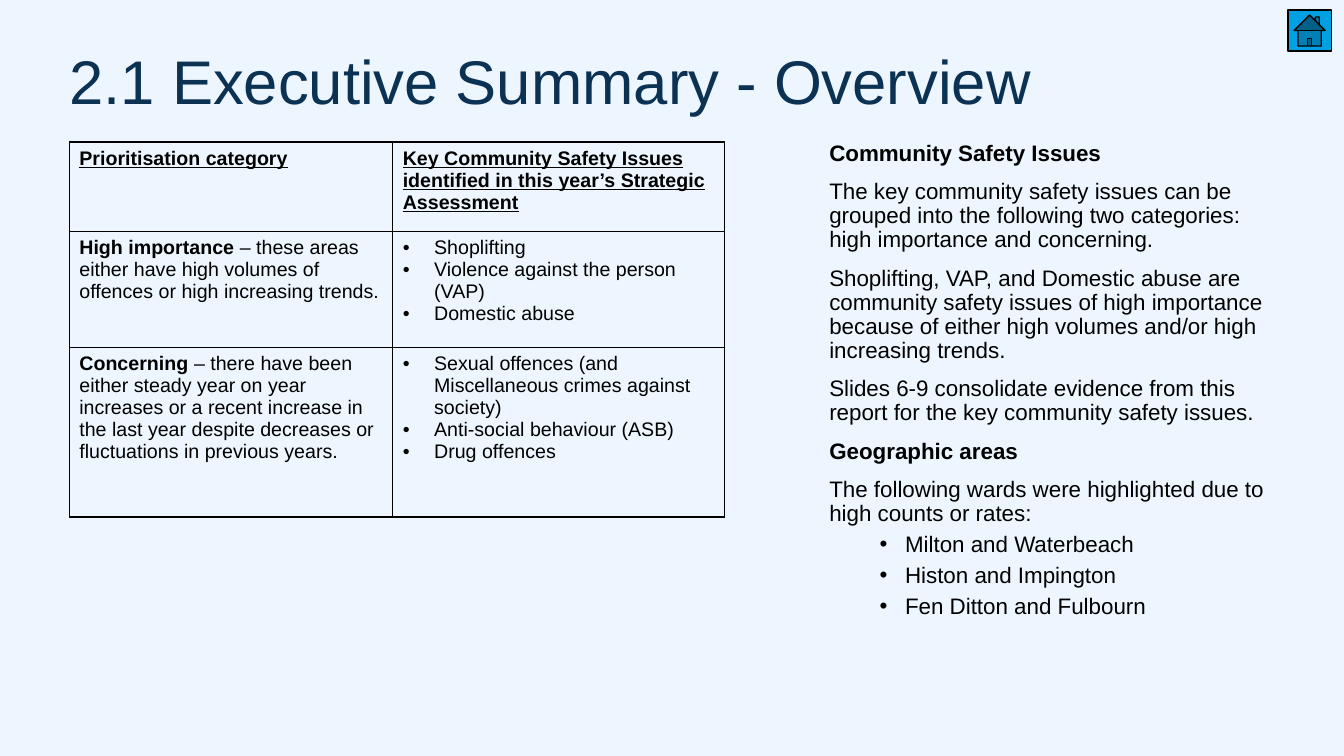
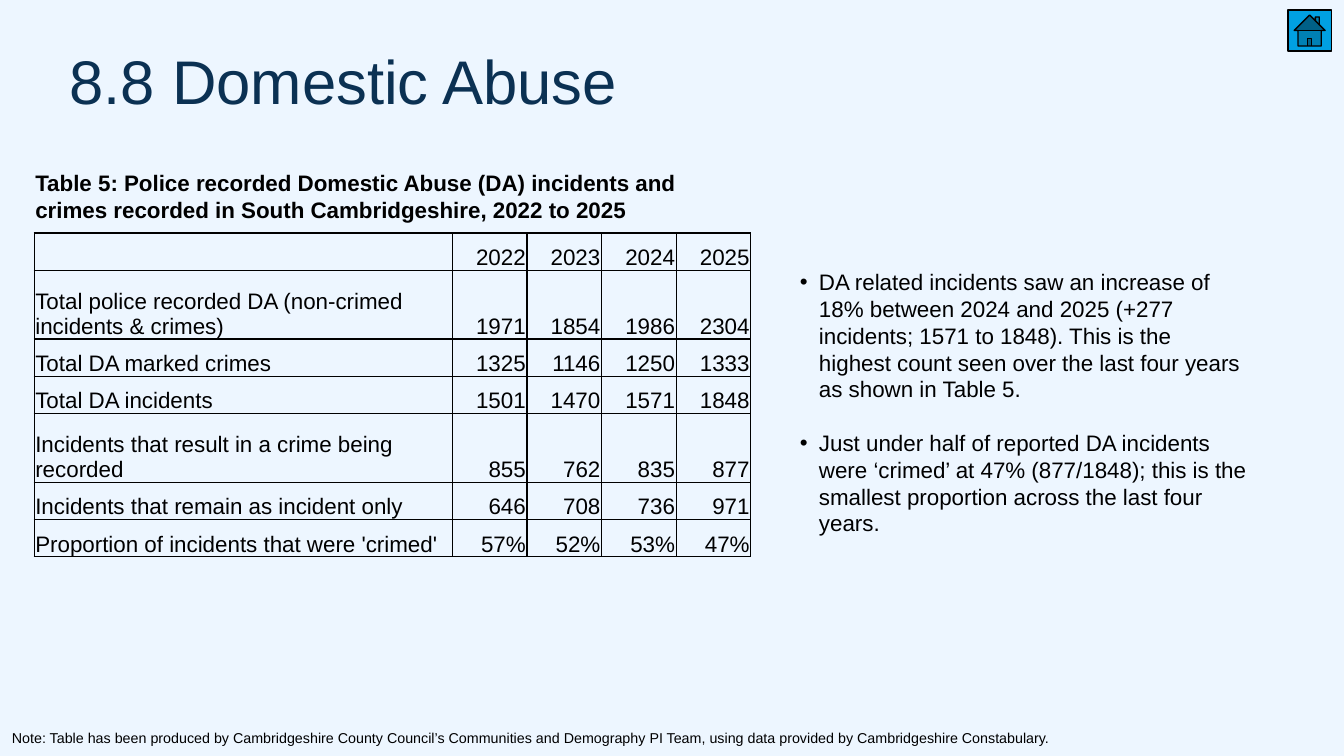
from lxml import etree
from pptx import Presentation
from pptx import util as u
from pptx.dml.color import RGBColor
from pptx.enum import shapes, text
from pptx.oxml.ns import qn

Cm = u.Cm
BLACK, NAVY, BLUE, PALE = "000000", "0B3153", "00A0E2", "EDF6FF"
RIGHT = text.PP_ALIGN.RIGHT
TOP, BOTTOM = text.MSO_ANCHOR.TOP, text.MSO_ANCHOR.BOTTOM


def add_frame(slide, left, top, width, height, inset=True, anchor=TOP):
    box = slide.shapes.add_textbox(Cm(left), Cm(top), Cm(width), Cm(height))
    frame = box.text_frame
    frame.word_wrap = True
    frame.vertical_anchor = anchor
    if not inset:
        frame.margin_left = frame.margin_right = 0
        frame.margin_top = frame.margin_bottom = 0
    return frame


def write(frame, content, lead="", size=16, color=BLACK, bold=False, underline=False,
          align=None, spacing=None, before=0, bullet=None):
    """Add a paragraph; lead is bold opening text, bullet is (indent, hang) in cm."""
    paragraph = frame.paragraphs[0]
    if paragraph.runs:
        paragraph = frame.add_paragraph()
        paragraph.space_before = u.Pt(before)
    paragraph.alignment = align
    paragraph.line_spacing = spacing
    if bullet:
        indent, hang = bullet
        properties = paragraph._p.get_or_add_pPr()
        properties.set("marL", str(Cm(indent)))
        properties.set("indent", str(-Cm(hang)))
        etree.SubElement(properties, qn("a:buFont"), typeface="Arial")
        etree.SubElement(properties, qn("a:buChar"), char="•")
    for part, is_bold in ((lead, True), (content, bold)):
        if part:
            run = paragraph.add_run()
            run.text = part
            run.font.name = "Arial"
            run.font.size = u.Pt(size)
            run.font.bold = is_bold
            run.font.underline = underline
            run.font.color.rgb = RGBColor.from_string(color)


presentation = Presentation()
presentation.slide_width, presentation.slide_height = Cm(33.87), Cm(19.05)
background = presentation.slide_master.background.fill
background.solid()
background.fore_color.rgb = RGBColor.from_string(PALE)

# Titles and home buttons
slides = []
for title in ("2.1 Executive Summary - Overview", "8.8 Domestic Abuse"):
    slide = presentation.slides.add_slide(presentation.slide_layouts[6])
    slides.append(slide)
    write(add_frame(slide, 1.75, 1.3, 29.21, 3.38, inset=False), title,
          size=44, color=NAVY, spacing=0.9)
    home = slide.shapes.add_shape(shapes.MSO_SHAPE.ACTION_BUTTON_HOME,
                                  Cm(32.46), Cm(0.25), Cm(1.09), Cm(1.04))
    home.shadow.inherit = False
    home.fill.solid()
    home.fill.fore_color.rgb = RGBColor.from_string(BLUE)
    home.line.color.rgb = RGBColor.from_string(BLACK)
    home.line.width = u.Pt(1)
overview, abuse = slides

# Table contents: each cell is a list of (text, format) paragraphs
heading = {"size": 14, "bold": True, "underline": True}
issue = {"size": 14, "bullet": (0.79, 0.79)}
priority_rows = [
    [[("Prioritisation category", heading)],
     [("Key Community Safety Issues identified in this year’s Strategic Assessment", heading)]],
    [[("– these areas either have high volumes of offences or high increasing trends.",
       {"size": 14, "lead": "High importance "})],
     [(name, issue) for name in
      ("Shoplifting", "Violence against the person (VAP)", "Domestic abuse")]],
    [[("– there have been either steady year on year increases or a recent increase in "
       "the last year despite decreases or fluctuations in previous years.",
       {"size": 14, "lead": "Concerning "})],
     [(name, issue) for name in
      ("Sexual offences (and Miscellaneous crimes against society)",
       "Anti-social behaviour (ASB)", "Drug offences")]],
]
counts = [
    ("", "2022", "2023", "2024", "2025"),
    ("Total police recorded DA (non-crimed incidents & crimes)", "1971", "1854", "1986", "2304"),
    ("Total DA marked crimes", "1325", "1146", "1250", "1333"),
    ("Total DA incidents", "1501", "1470", "1571", "1848"),
    ("Incidents that result in a crime being recorded", "855", "762", "835", "877"),
    ("Incidents that remain as incident only", "646", "708", "736", "971"),
    ("Proportion of incidents that were 'crimed'", "57%", "52%", "53%", "47%"),
]
count_rows = [[[(label, {})]] + [[(value, {"align": RIGHT})] for value in values]
              for label, *values in counts]
short, tall = 0.94, 1.73

for slide, left, top, widths, heights, rows, margins, anchor in (
    (overview, 1.75, 3.58, [8.15, 8.36], [2.26, 2.92, 4.27], priority_rows,
     (0.25, 0.13, 0.25, 0.13), TOP),
    (abuse, 0.86, 5.87, [10.54] + [1.88] * 4, [short, tall, short, short, tall, short, short],
     count_rows, (0.03, 0.03, 0.03, 0), BOTTOM),
):
    table = slide.shapes.add_table(len(heights), len(widths), Cm(left), Cm(top),
                                   Cm(sum(widths)), Cm(sum(heights))).table
    table.first_row = table.horz_banding = False
    for column, width in zip(table.columns, widths):
        column.width = Cm(width)
    for row, height, contents in zip(table.rows, heights, rows):
        row.height = Cm(height)
        for cell, paragraphs in zip(row.cells, contents):
            (cell.margin_left, cell.margin_top,
             cell.margin_right, cell.margin_bottom) = map(Cm, margins)
            cell.vertical_anchor = anchor
            for side in ("lnL", "lnR", "lnT", "lnB"):
                border = etree.SubElement(cell._tc.get_or_add_tcPr(), qn(f"a:{side}"),
                                          w=str(u.Pt(1)))
                fill = etree.SubElement(border, qn("a:solidFill"))
                etree.SubElement(fill, qn("a:srgbClr"), val=BLACK)
            cell.fill.background()
            for content, style in paragraphs:
                write(cell.text_frame, content, **style)

# Overview commentary
commentary = add_frame(overview, 20.9, 3.58, 11.56, 12.7, inset=False)
for content, bold in (
    ("Community Safety Issues", True),
    ("The key community safety issues can be grouped into the following two categories: "
     "high importance and concerning.", False),
    ("Shoplifting, VAP, and Domestic abuse are community safety issues of high importance "
     "because of either high volumes and/or high increasing trends.", False),
    ("Slides 6-9 consolidate evidence from this report for the key community safety issues.",
     False),
    ("Geographic areas", True),
    ("The following wards were highlighted due to high counts or rates:", False),
):
    write(commentary, content, bold=bold, spacing=0.9, before=10)
for ward in ("Milton and Waterbeach", "Histon and Impington", "Fen Ditton and Fulbourn"):
    write(commentary, ward, spacing=0.9, before=5, bullet=(1.91, 0.64))

# Domestic abuse caption, findings and note
write(add_frame(abuse, 0.64, 4.14, 17.55, 1.63),
      "Table 5: Police recorded Domestic Abuse (DA) incidents and crimes recorded in "
      "South Cambridgeshire, 2022 to 2025", bold=True)
findings = add_frame(abuse, 19.91, 6.63, 11.79, 7.09)
for content in (
    "DA related incidents saw an increase of 18% between 2024 and 2025 (+277 incidents; "
    "1571 to 1848). This is the highest count seen over the last four years as shown in Table 5.",
    "Just under half of reported DA incidents were ‘crimed’ at 47% (877/1848); this is the "
    "smallest proportion across the last four years.",
):
    write(findings, content, before=19, bullet=(0.48, 0.48))
write(add_frame(abuse, 0.3, 18.21, 26.14, 0.61, inset=False, anchor=BOTTOM),
      "Note: Table has been produced by Cambridgeshire County Council’s Communities and "
      "Demography PI Team, using data provided by Cambridgeshire Constabulary.",
      size=10.2, spacing=0.9)

presentation.save("out.pptx")
